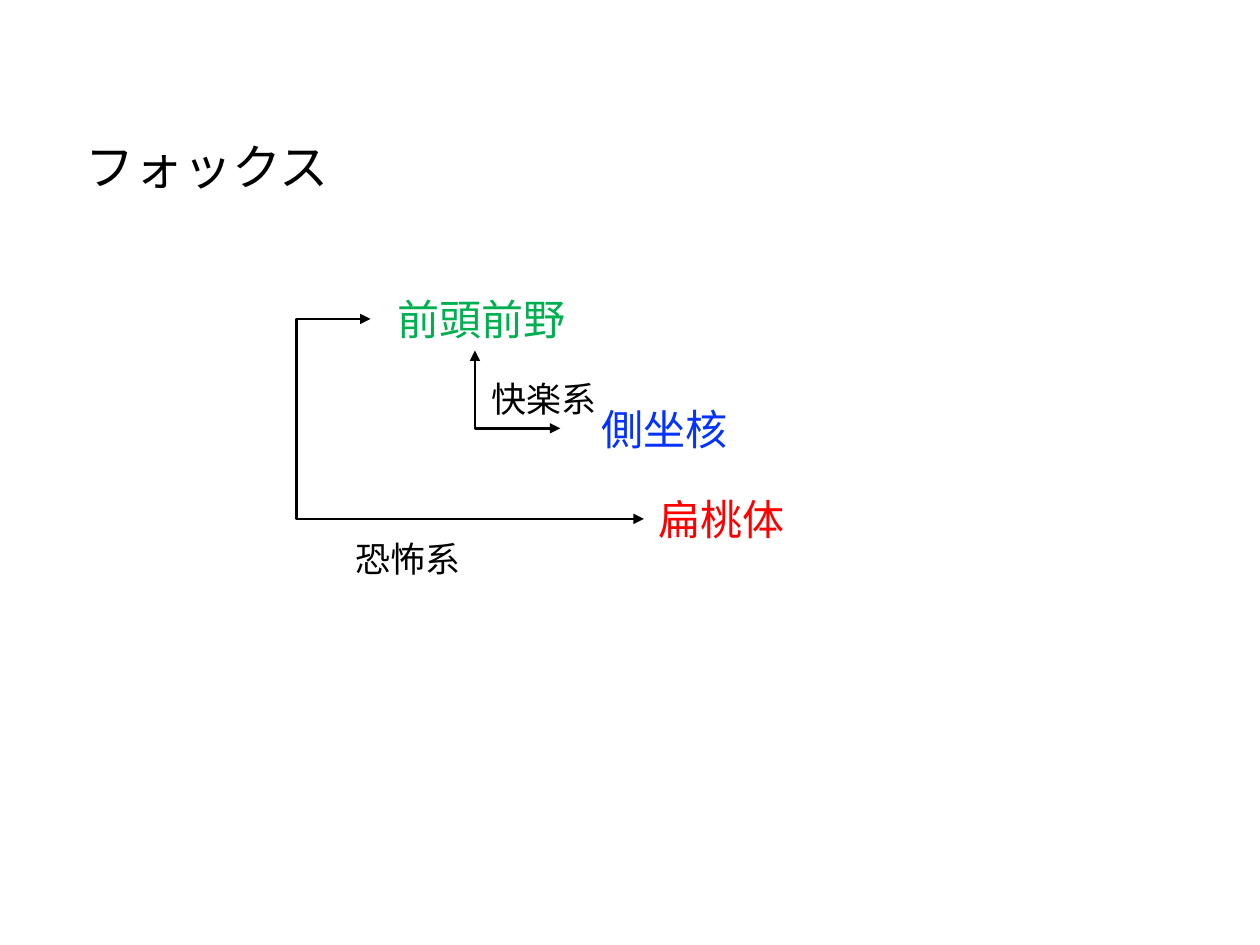
from lxml.etree import SubElement
from pptx import Presentation
from pptx.dml.color import RGBColor
from pptx.enum.shapes import MSO_CONNECTOR, MSO_SHAPE
from pptx.enum.text import MSO_ANCHOR, MSO_AUTO_SIZE, PP_ALIGN
from pptx.oxml.ns import qn
from pptx.util import Cm, Pt

FONT = "Noto Sans CJK JP"
COLORS = {
    "black": "000000",
    "white": "FFFFFF",
    "frontal": "00B050",
    "accumbens": "0432FF",
    "amygdala": "FF0000",
}


def color(name):
    return RGBColor.from_string(COLORS[name])


def write_text(shape, text, size, color_name, align, wrap):
    frame = shape.text_frame
    frame.word_wrap = wrap
    frame.auto_size = MSO_AUTO_SIZE.SHAPE_TO_FIT_TEXT
    paragraph = frame.paragraphs[0]
    paragraph.text = text
    paragraph.alignment = align
    font = paragraph.font
    font.name = FONT
    font.size = Pt(size)
    font.color.rgb = color(color_name)
    SubElement(font._element, qn("a:ea"), typeface=FONT)


def add_label(slide, text, box, size, color_name="black", align=PP_ALIGN.LEFT, wrap=False):
    shape = slide.shapes.add_textbox(*map(Cm, box))
    write_text(shape, text, size, color_name, align, wrap)


def add_region_box(slide, text, box, size, color_name):
    shape = slide.shapes.add_shape(MSO_SHAPE.RECTANGLE, *map(Cm, box))
    shape.shadow.inherit = False
    shape.fill.solid()
    shape.fill.fore_color.rgb = color("white")
    shape.line.fill.background()
    shape.text_frame.vertical_anchor = MSO_ANCHOR.MIDDLE
    write_text(shape, text, size, color_name, PP_ALIGN.RIGHT, True)


def add_double_arrow(slide, begin, end):
    connector = slide.shapes.add_connector(MSO_CONNECTOR.ELBOW, *map(Cm, begin + end))
    connector.line.color.rgb = color("black")
    connector.line.width = Pt(1.5)
    line = connector.line._get_or_add_ln()
    for tag in ("a:headEnd", "a:tailEnd"):
        SubElement(line, qn(tag), type="triangle")
    properties = connector._element.spPr
    SubElement(properties, qn("a:effectLst"))
    return properties


def add_corner_arrow(slide, begin, end):
    properties = add_double_arrow(slide, begin, end)
    properties.find(qn("a:prstGeom")).set("prst", "bentConnector2")
    properties.find(qn("a:xfrm")).set("rot", str(270 * 60000))


def add_bracket_arrow(slide, begin, end, bend):
    properties = add_double_arrow(slide, begin, end)
    guides = properties.find(qn("a:prstGeom")).find(qn("a:avLst"))
    SubElement(guides, qn("a:gd"), name="adj1", fmla=f"val {round(bend * 100000)}")


def main():
    presentation = Presentation()
    presentation.slide_width = Cm(25.4)
    presentation.slide_height = Cm(19.05)
    slide = presentation.slides.add_slide(presentation.slide_layouts[6])

    add_label(slide, "フォックス", (1.47, 2.62, 5.49, 1.45), 28)
    add_label(slide, "側坐核", (11.3, 8, 3.61, 1.3), 24, "accumbens", PP_ALIGN.RIGHT, True)
    add_label(slide, "扁桃体", (12.98, 9.83, 3.15, 1.3), 24, "amygdala", PP_ALIGN.CENTER, True)
    add_region_box(slide, "前頭前野", (7.47, 5.79, 4.19, 1.27), 24, "frontal")
    add_corner_arrow(slide, (11.22, 6.99), (9.65, 8.71))
    add_bracket_arrow(slide, (7.47, 6.43), (12.98, 10.46), -0.27)
    add_label(slide, "恐怖系", (6.91, 10.72, 2.64, 1.12), 20)
    add_label(slide, "快楽系", (9.65, 7.49, 2.64, 1.12), 20)

    presentation.save("out.pptx")


if __name__ == "__main__":
    main()
